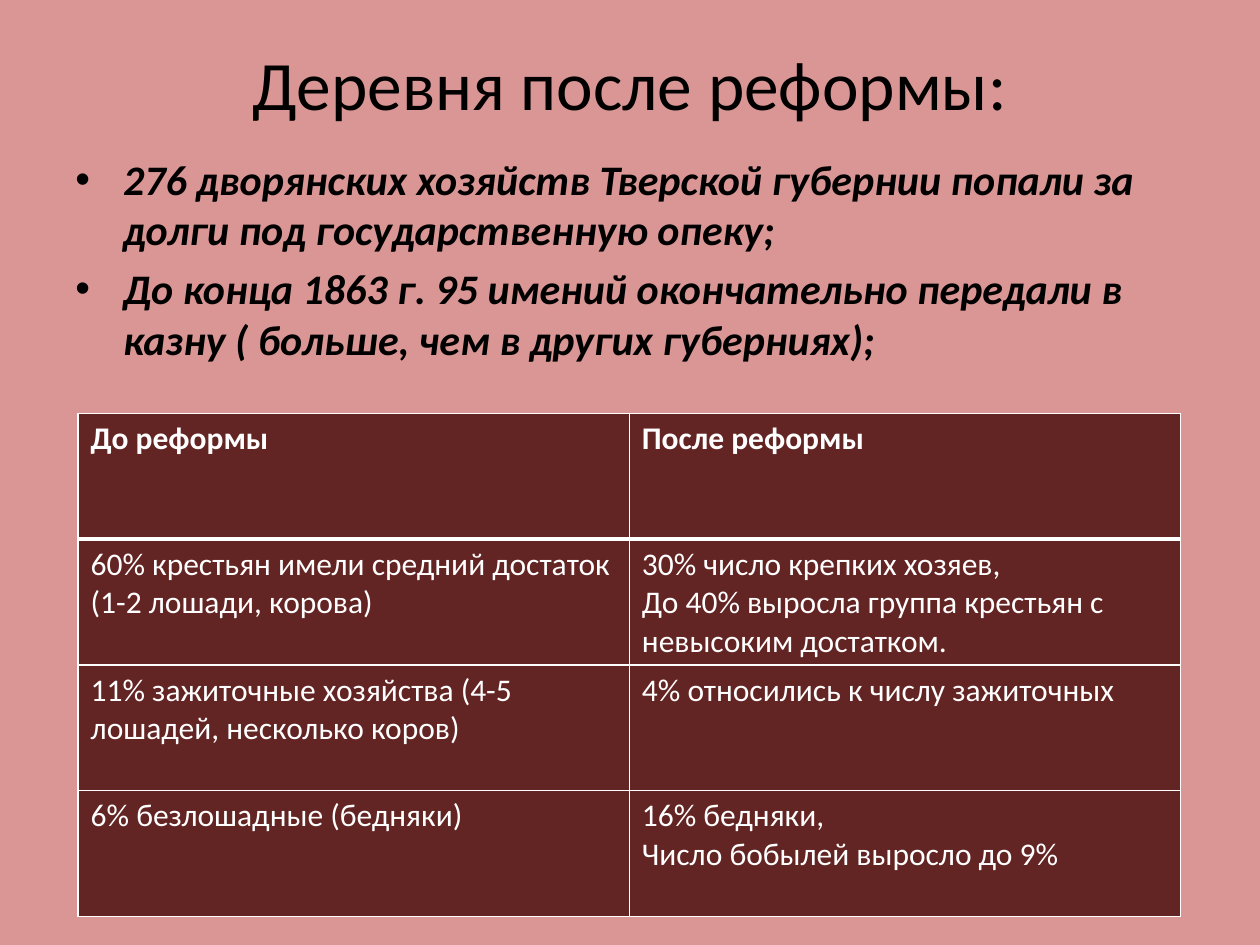
from dataclasses import dataclass

from lxml import etree
from pptx import Presentation
from pptx.dml.color import RGBColor
from pptx.enum import text
from pptx.oxml import ns
from pptx.util import Inches, Pt


@dataclass(frozen=True)
class Theme:
    font: str = "Calibri"
    back: str = "D99694"
    ink: str = "000000"
    cell: str = "632523"
    light: str = "FFFFFF"
    title: float = 39.6
    body: float = 24
    table: float = 18
    thin: float = 1
    thick: float = 3


def node(parent, tag, **attrs):
    return etree.SubElement(parent, ns.qn(tag), attrs)


class Page:
    def __init__(self, slide, theme):
        self.slide, self.theme = slide, theme
        fill = slide.background.fill
        fill.solid()
        fill.fore_color.rgb = RGBColor.from_string(theme.back)

    def letter(self, frame, lines, color, **style):
        """Put one paragraph per line into the frame."""
        for i, line in enumerate(lines):
            par = frame.paragraphs[0] if i == 0 else frame.add_paragraph()
            run = par.add_run()
            run.text = line
            for key, value in {"name": self.theme.font, **style}.items():
                setattr(run.font, key, value)
            run.font.color.rgb = RGBColor.from_string(color)

    def box(self, area, lines, anchor, **style):
        shape = self.slide.shapes.add_textbox(*map(Inches, area))
        frame = shape.text_frame
        frame.word_wrap = True
        frame.vertical_anchor = anchor
        self.letter(frame, lines, self.theme.ink, **style)
        return frame

    def title(self, area, line):
        frame = self.box(area, [line], text.MSO_ANCHOR.MIDDLE,
                         size=Pt(self.theme.title))
        frame.paragraphs[0].alignment = text.PP_ALIGN.CENTER

    def bullets(self, area, lines):
        size = self.theme.body
        frame = self.box(area, lines, text.MSO_ANCHOR.TOP,
                         size=Pt(size), bold=True, italic=True)
        dent = Inches(0.38)
        for par in frame.paragraphs:
            par.space_before = Pt(size * 0.2)
            props = par._p.get_or_add_pPr()
            props.set("marL", str(dent))
            props.set("indent", str(-dent))
            node(props, "a:buFont", typeface="Arial")
            node(props, "a:buChar", char="•")

    def border(self, cell, widths):
        props = cell._tc.get_or_add_tcPr()
        for side, width in zip("LRTB", widths):
            line = node(props, f"a:ln{side}", w=str(Pt(width)))
            node(node(line, "a:solidFill"), "a:srgbClr", val=self.theme.light)

    def table(self, area, rows):
        look = self.theme
        grid = self.slide.shapes.add_table(
            len(rows), len(rows[0]), *map(Inches, area)).table
        for r, row in enumerate(rows):
            top = look.thick if r == 1 else look.thin
            base = look.thick if r == 0 else look.thin
            for c, lines in enumerate(row):
                cell = grid.cell(r, c)
                self.border(cell, (look.thin, look.thin, top, base))
                cell.fill.solid()
                cell.fill.fore_color.rgb = RGBColor.from_string(look.cell)
                self.letter(cell.text_frame, lines, look.light,
                            size=Pt(look.table), bold=r == 0)


ROWS = [
    [["До реформы"], ["После реформы"]],
    [["60% крестьян имели средний достаток", "(1-2 лошади, корова)"],
     ["30% число крепких хозяев,",
      "До 40% выросла группа крестьян с невысоким достатком."]],
    [["11% зажиточные хозяйства (4-5 лошадей, несколько коров)"],
     ["4% относились к числу зажиточных"]],
    [["6% безлошадные (бедняки)"],
     ["16% бедняки,", "Число бобылей выросло до 9%"]],
]


def main():
    deck = Presentation()
    deck.slide_width, deck.slide_height = Inches(10), Inches(7.5)
    page = Page(deck.slides.add_slide(deck.slide_layouts[6]), Theme())
    page.title((0.5, 0.3, 9, 0.72), "Деревня после реформы:")
    page.bullets((0.5, 1.17, 9, 5.53), [
        "276 дворянских хозяйств Тверской губернии попали за долги "
        "под государственную опеку;",
        "До конца 1863 г. 95 имений окончательно передали в казну "
        "( больше, чем в других губерниях);",
    ])
    page.table((0.62, 3.28, 8.75, 3.99), ROWS)
    deck.save("out.pptx")


if __name__ == "__main__":
    main()
